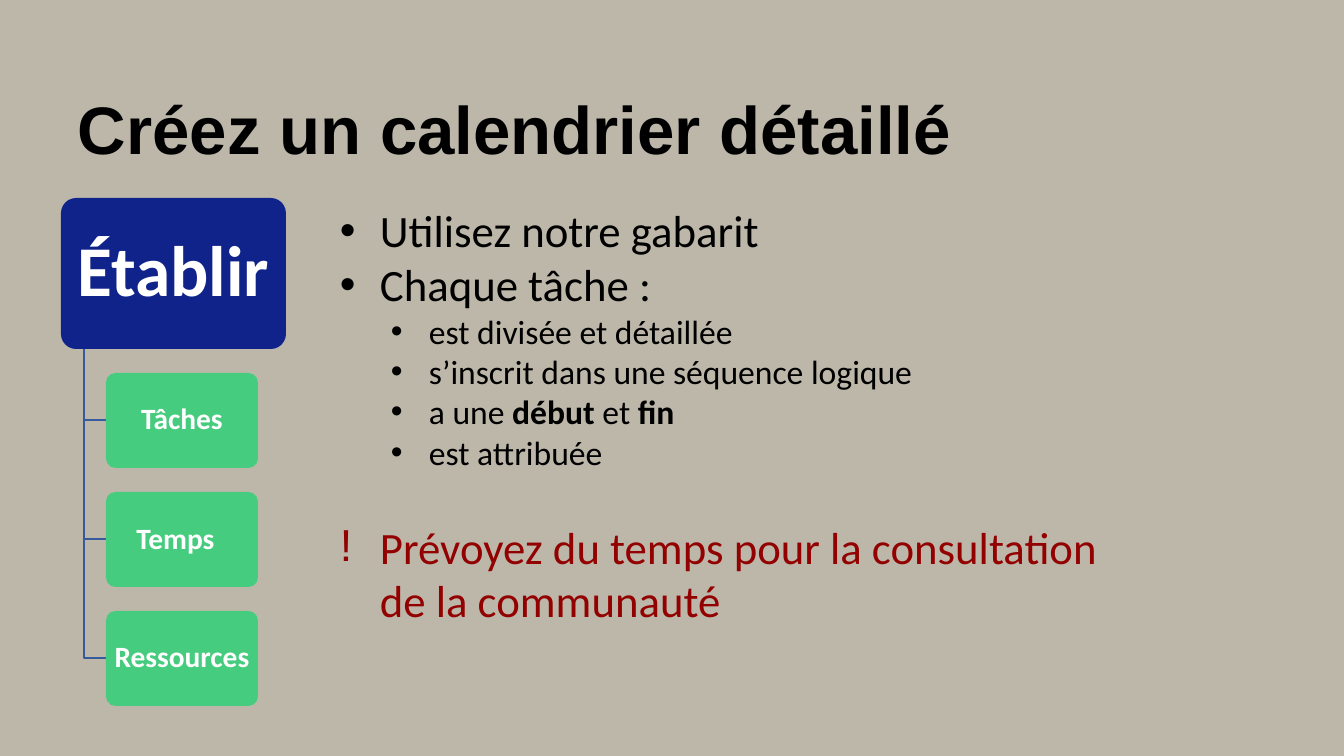
"""Build the slide on making a detailed schedule."""
from dataclasses import dataclass

from lxml.etree import SubElement
from pptx import Presentation
from pptx.dml.color import RGBColor
from pptx.enum.shapes import MSO_SHAPE as Shape
from pptx.enum.text import MSO_ANCHOR as Anchor, PP_ALIGN as Align
from pptx.oxml.ns import qn
from pptx.util import Pt

EMU_PER_INCH, PX_PER_INCH = 914400, 100.8
COLORS = {"bg": "BDB7AA", "navy": "10238B", "green": "46CC7E", "line": "365B9D",
          "white": "FFFFFF", "black": "000000", "red": "920000"}


@dataclass
class Box:
    text: str
    x: int
    y: int
    w: int
    h: int
    fill: str
    size: int
    shift: int = 0


@dataclass
class Item:
    runs: list[tuple[str, bool]]
    level: int = 0
    bullet: str = "•"
    color: str = "black"
    before: int = 0


ROOT = Box("Établir", 61, 198, 225, 151, "navy", 51)
STEP_TOP, STEP_PITCH = 373, 119
STEPS = [Box(text, 106, STEP_TOP + i * STEP_PITCH, 152, 95, "green", 21, shift)
         for i, (text, shift) in enumerate([("Tâches", 0), ("Temps", 13), ("Ressources", 0)])]
TRUNK_X = 84
SIZES = [32, 24]
INDENTS = [(40, -40), (89, -38)]
ITEMS = [
    Item([("Utilisez notre gabarit", False)]),
    Item([("Chaque tâche :", False)]),
    Item([("est divisée et détaillée", False)], 1),
    Item([("s’inscrit dans une séquence logique", False)], 1),
    Item([("a une ", False), ("début", True), (" et ", False), ("fin", True)], 1),
    Item([("est attribuée", False)], 1),
    Item([("Prévoyez du temps pour la consultation de la communauté", False)],
         bullet="!", color="red", before=34),
]


def px(n: int) -> int:
    return round(n * EMU_PER_INCH / PX_PER_INCH)


def rgb(name: str) -> RGBColor:
    return RGBColor.from_string(COLORS[name])


def add_run(p, text: str, *, size: int, color: str = "black", bold: bool = False,
            font: str = "Calibri") -> None:
    r = p.add_run()
    r.text = text
    r.font.name, r.font.size, r.font.bold = font, Pt(size), bold
    r.font.color.rgb = rgb(color)


def set_margins(tf, left: int, top: int, right: int, bottom: int) -> None:
    tf.margin_left, tf.margin_top = px(left), px(top)
    tf.margin_right, tf.margin_bottom = px(right), px(bottom)


def add_title(s) -> None:
    tf = s.shapes.add_textbox(px(78), px(81), px(937), px(117)).text_frame
    tf.word_wrap = True
    tf.vertical_anchor = Anchor.MIDDLE
    set_margins(tf, 0, 0, 0, 28)
    p = tf.paragraphs[0]
    p.line_spacing = Pt(60)
    add_run(p, "Créez un calendrier détaillé", size=48, bold=True, font="Arial")


def add_box(s, box: Box) -> None:
    sp = s.shapes.add_shape(Shape.ROUNDED_RECTANGLE, px(box.x), px(box.y), px(box.w), px(box.h))
    sp.adjustments[0] = 0.1
    sp.shadow.inherit = False
    sp.fill.solid()
    sp.fill.fore_color.rgb = rgb(box.fill)
    sp.line.fill.background()
    tf = sp.text_frame
    tf.word_wrap = False
    tf.vertical_anchor = Anchor.MIDDLE
    set_margins(tf, 7, 6, 7 + box.shift, 6)
    p = tf.paragraphs[0]
    p.alignment = Align.CENTER
    p.line_spacing = 0.9
    add_run(p, box.text, size=box.size, color="white", bold=True)


def add_branch(s, step: Box) -> None:
    middle = step.y + step.h // 2
    builder = s.shapes.build_freeform(px(TRUNK_X), px(ROOT.y + ROOT.h))
    builder.add_line_segments([(px(TRUNK_X), px(middle)), (px(step.x), px(middle))], close=False)
    sp = builder.convert_to_shape()
    sp.shadow.inherit = False
    sp.fill.background()
    sp.line.color.rgb = rgb("line")
    sp.line.width = Pt(1)


def add_bullet(p, char: str, level: int) -> None:
    left, hanging = INDENTS[level]
    p.level = level
    ppr = p._p.get_or_add_pPr()
    ppr.set("marL", str(px(left)))
    ppr.set("indent", str(px(hanging)))
    SubElement(ppr, qn("a:buFont")).set("typeface", "Arial")
    SubElement(ppr, qn("a:buChar")).set("char", char)


def add_list(s) -> None:
    tf = s.shapes.add_textbox(px(330), px(198), px(787), px(437)).text_frame
    tf.word_wrap = True
    for i, item in enumerate(ITEMS):
        p = tf.add_paragraph() if i else tf.paragraphs[0]
        add_bullet(p, item.bullet, item.level)
        if item.before:
            p.space_before = Pt(item.before)
        for text, bold in item.runs:
            add_run(p, text, size=SIZES[item.level], color=item.color, bold=bold)


def main() -> None:
    prs = Presentation()
    prs.slide_width, prs.slide_height = px(1344), px(756)
    s = prs.slides.add_slide(prs.slide_layouts[6])
    s.background.fill.solid()
    s.background.fill.fore_color.rgb = rgb("bg")
    add_title(s)
    add_box(s, ROOT)
    for step in STEPS:
        add_branch(s, step)
        add_box(s, step)
    add_list(s)
    prs.save("out.pptx")


if __name__ == "__main__":
    main()
